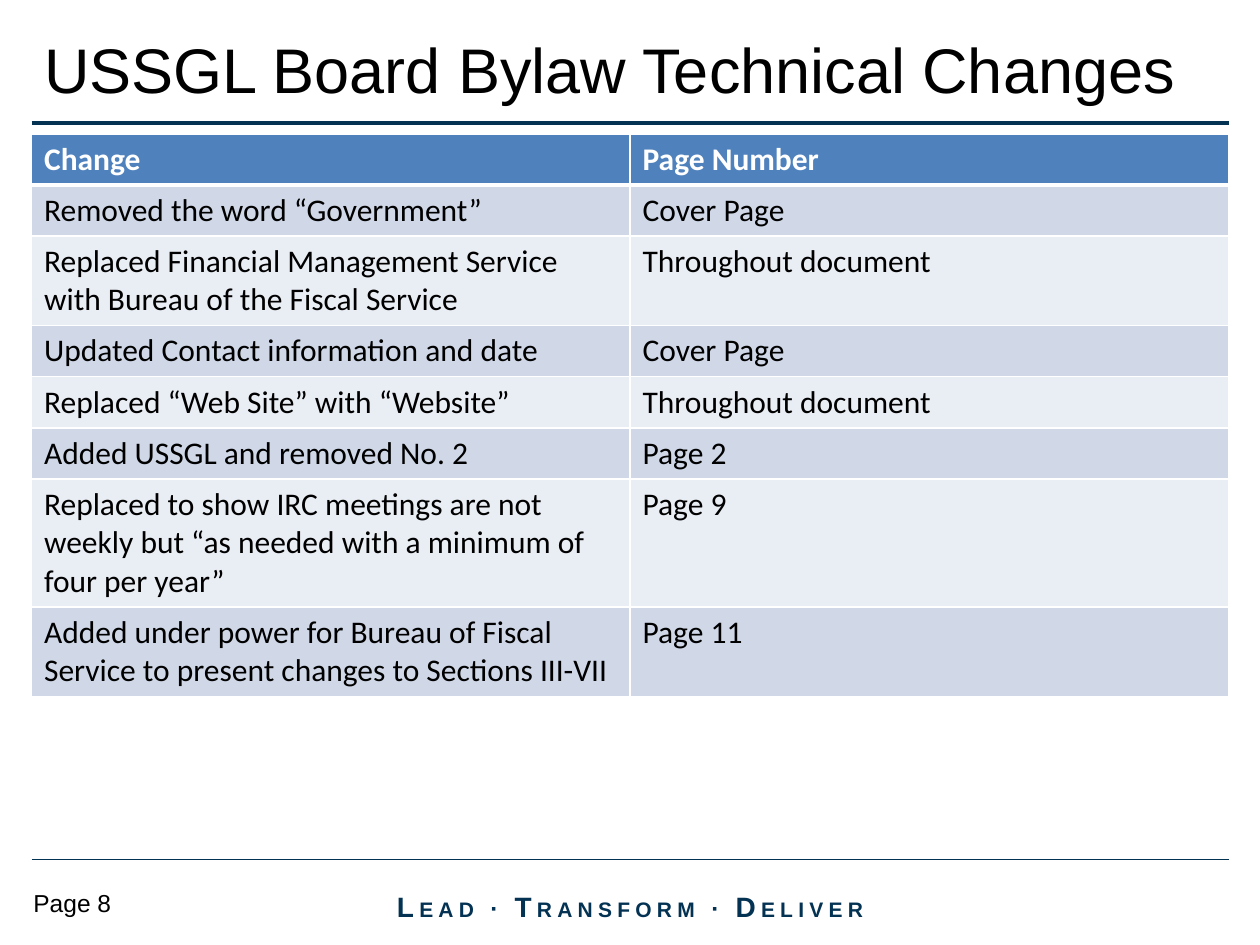
import lxml.etree
import pptx
import pptx.dml.color
import pptx.enum.shapes
import pptx.enum.text
import pptx.oxml
import pptx.oxml.ns
import pptx.util

COLORS = {
    "navy": "043253", "black": "000000", "white": "FFFFFF",
    "header": "4F81BD", "band": "D0D8E8", "light": "E9EDF4",
}
CHANGES = [
    ("Change", "Page Number"),
    ("Removed the word “Government”", "Cover Page"),
    ("Replaced Financial Management Service with Bureau of the Fiscal Service", "Throughout document"),
    ("Updated Contact information and date", "Cover Page"),
    ("Replaced “Web Site” with “Website”", "Throughout document"),
    ("Added USSGL and removed No. 2", "Page 2"),
    ("Replaced to show IRC meetings are not weekly but “as needed with a minimum of four per year”", "Page 9"),
    ("Added under power for Bureau of Fiscal Service to present changes to Sections III-VII", "Page 11"),
]
MOTTO = [("L", 16), ("EAD ", 12), ("∙ ", 14), ("T", 16), ("RANSFORM ", 12),
         ("∙ ", 14), ("D", 16), ("ELIVER", 12)]
LEFT, WIDTH = 18, 684


def color(name):
    return pptx.dml.color.RGBColor.from_string(COLORS[name])


class SlideBuilder:
    heading_font = "Arial"
    table_font = "Calibri"

    def __init__(self, slide):
        self.slide = slide

    def style(self, font, name, size, color_name, bold=False):
        font.name = name
        font.size = pptx.util.Pt(size)
        font.bold = bold
        font.color.rgb = color(color_name)

    def title(self, text, top, height):
        shape = self.slide.shapes.title
        shape.left, shape.top = pptx.util.Pt(LEFT), pptx.util.Pt(top)
        shape.width, shape.height = pptx.util.Pt(WIDTH), pptx.util.Pt(height)
        frame = shape.text_frame
        frame.text = text
        frame.auto_size = pptx.enum.text.MSO_AUTO_SIZE.NONE
        frame.vertical_anchor = pptx.enum.text.MSO_ANCHOR.MIDDLE
        paragraph = frame.paragraphs[0]
        paragraph.alignment = pptx.enum.text.PP_ALIGN.LEFT
        self.style(paragraph.font, self.heading_font, 36, "black")

    def rule(self, top, weight):
        connector = self.slide.shapes.add_connector(
            pptx.enum.shapes.MSO_CONNECTOR.STRAIGHT,
            *map(pptx.util.Pt, (LEFT, top, LEFT + WIDTH, top)))
        connector.line.color.rgb = color("navy")
        connector.line.width = pptx.util.Pt(weight)
        lxml.etree.SubElement(connector._element.spPr, pptx.oxml.ns.qn("a:effectLst"))

    def text_box(self, box):
        frame = self.slide.shapes.add_textbox(*map(pptx.util.Pt, box)).text_frame
        frame.word_wrap = True
        return frame

    def page_label(self, text, box):
        paragraph = self.text_box(box).paragraphs[0]
        paragraph.text = text
        self.style(paragraph.font, self.heading_font, 14, "black")

    def motto(self, pieces, box):
        frame = self.text_box(box)
        frame.vertical_anchor = pptx.enum.text.MSO_ANCHOR.MIDDLE
        paragraph = frame.paragraphs[0]
        paragraph.alignment = pptx.enum.text.PP_ALIGN.CENTER
        for text, size in pieces:
            run = paragraph.add_run()
            run.text = text
            self.style(run.font, self.heading_font, size, "navy", True)
            run._r.get_or_add_rPr().set("spc", "300")

    def borders(self, cell, bottom):
        properties = cell._tc.get_or_add_tcPr()
        for side, weight in (("L", 1), ("R", 1), ("T", 1), ("B", bottom)):
            properties.append(pptx.oxml.parse_xml(
                f'<a:ln{side} {pptx.oxml.ns.nsdecls("a")} w="{pptx.util.Pt(weight)}">'
                f'<a:solidFill><a:srgbClr val="{COLORS["white"]}"/></a:solidFill></a:ln{side}>'))

    def table(self, rows, top, row_height):
        table = self.slide.shapes.add_table(
            len(rows), len(rows[0]),
            *map(pptx.util.Pt, (LEFT, top, WIDTH, row_height * len(rows)))).table
        for row_index, texts in enumerate(rows):
            header = row_index == 0
            fill = "header" if header else "band" if row_index % 2 else "light"
            for column_index, text in enumerate(texts):
                cell = table.cell(row_index, column_index)
                cell.text = text
                self.borders(cell, 3 if header else 1)
                cell.fill.solid()
                cell.fill.fore_color.rgb = color(fill)
                self.style(cell.text_frame.paragraphs[0].font, self.table_font, 18,
                           "white" if header else "black", header)


def main():
    presentation = pptx.Presentation()
    presentation.slide_width = pptx.util.Pt(720)
    presentation.slide_height = pptx.util.Pt(540)
    title_only = presentation.slide_layouts[5]
    builder = SlideBuilder(presentation.slides.add_slide(title_only))
    builder.title("USSGL Board Bylaw Technical Changes", 12, 54)
    builder.rule(70.5, 2.25)
    builder.table(CHANGES, 76.5, 29.2)
    builder.rule(491, 0.75)
    builder.page_label("Page 8", (12, 504, 90, 24))
    builder.motto(MOTTO, (204, 503.5, 312, 29))
    presentation.save("out.pptx")


if __name__ == "__main__":
    main()
